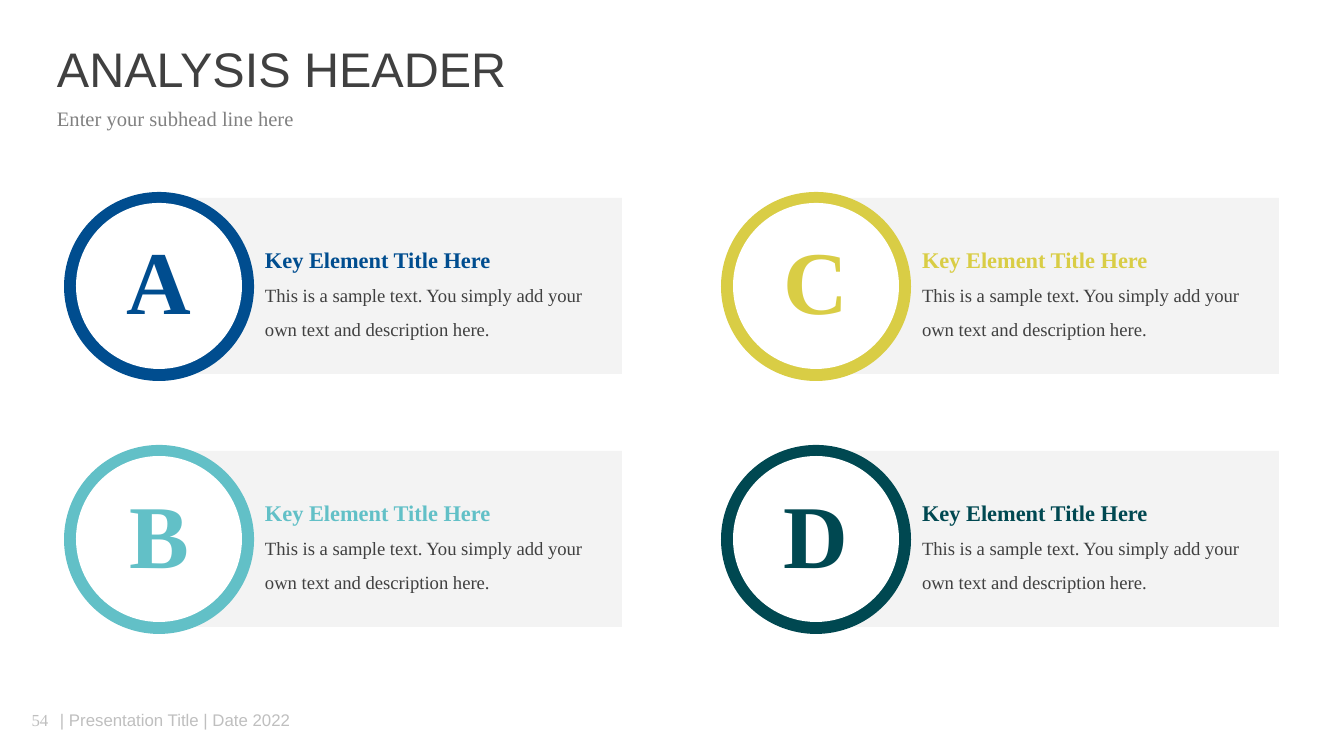
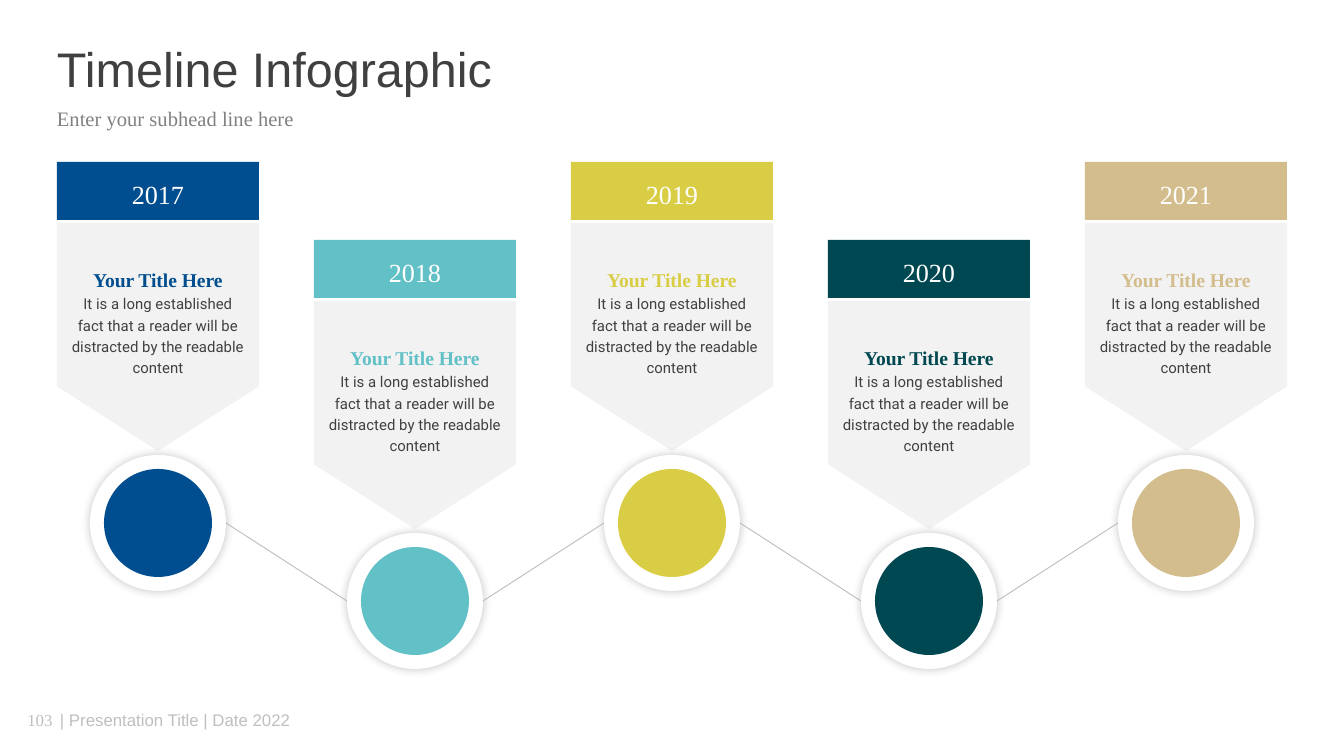
from copy import deepcopy
from dataclasses import dataclass

from lxml import etree
from pptx import Presentation
from pptx.dml.color import RGBColor
from pptx.enum.shapes import MSO_CONNECTOR, MSO_SHAPE
from pptx.enum.text import MSO_ANCHOR, MSO_AUTO_SIZE, PP_ALIGN
from pptx.oxml.ns import qn
from pptx.util import Emu, Pt

RECT = MSO_SHAPE.RECTANGLE
OVAL = MSO_SHAPE.OVAL
PENTAGON = MSO_SHAPE.PENTAGON
STRAIGHT = MSO_CONNECTOR.STRAIGHT
MIDDLE = MSO_ANCHOR.MIDDLE
GROW = MSO_AUTO_SIZE.SHAPE_TO_FIT_TEXT
LEFT, CENTER = PP_ALIGN.LEFT, PP_ALIGN.CENTER

EMU_PER_PX = 914400 / 134.4


@dataclass(frozen=True)
class Style:
    size: float
    font: str
    color: str
    bold: bool = False


@dataclass(frozen=True)
class Theme:
    blue: str = "004D8F"
    aqua: str = "62C0C7"
    lime: str = "D9CD45"
    teal: str = "004851"
    sand: str = "D4BD8D"
    white: str = "FFFFFF"
    panel: str = "F2F2F2"
    line: str = "BFBFBF"
    serif: str = "Times New Roman"
    title: Style = Style(26, "Arial", "404040")
    subhead: Style = Style(11, "Times New Roman", "808080")
    number: Style = Style(9, "Times New Roman", "BFBFBF")
    footer: Style = Style(9, "Arial", "BFBFBF")
    year: Style = Style(14, "Times New Roman", "FFFFFF")
    body: Style = Style(10, "Times New Roman", "404040")
    small: Style = Style(8, "Roboto", "404040")

    def heading(self, size, color):
        return Style(size, self.serif, color, True)


T = Theme()


def px(n):
    return Emu(round(n * EMU_PER_PX))


def rgb(color):
    return RGBColor.from_string(color)


def write(shape, paragraphs, align=LEFT, spacing=None, after=None, insets=None):
    """Fill a shape with paragraphs, each a list of (line, style) pairs."""
    tf = shape.text_frame
    tf.word_wrap = True
    tf.vertical_anchor = MIDDLE
    if insets:
        tf.margin_left = tf.margin_right = px(insets[0])
        tf.margin_top = tf.margin_bottom = px(insets[1])
    tf.text = "\n".join("\v".join(line for line, _ in lines) for lines in paragraphs)
    for p, lines in zip(tf.paragraphs, paragraphs):
        p.alignment = align
        p.line_spacing = spacing
        p.space_after = after
        for r, (_, style) in zip(p.runs, lines):
            r.font.size = Pt(style.size)
            r.font.name = style.font
            r.font.bold = style.bold
            r.font.color.rgb = rgb(style.color)
        for br in p._p.findall(qn("a:br")):
            br.append(deepcopy(p.runs[0]._r.rPr))


def add_text(s, box, paragraphs, align=LEFT, spacing=None, after=None,
             insets=(0, 0), grow=False):
    tb = s.shapes.add_textbox(*map(px, box))
    write(tb, paragraphs, align, spacing, after, insets)
    if grow:
        tb.text_frame.auto_size = GROW


def add_filled(shapes, kind, box, color):
    sp = shapes.add_shape(kind, *map(px, box))
    sp.shadow.inherit = False
    sp.fill.solid()
    sp.fill.fore_color.rgb = rgb(color)
    sp.line.fill.background()
    return sp


def set_alpha(parent, percent):
    """Set the opacity of the colour found below parent."""
    color = next(parent.iter(qn("a:srgbClr")))
    etree.SubElement(color, qn("a:alpha"), val=str(percent * 1000))


def add_glow(sp):
    """Give a shape a soft shadow that is equal on all sides."""
    effects = sp._element.spPr.find(qn("a:effectLst"))
    shadow = etree.SubElement(effects, qn("a:outerShdw"), blurRad=str(Pt(5)),
                              dist="0", dir="0", algn="ctr", rotWithShape="0")
    etree.SubElement(shadow, qn("a:srgbClr"), val="000000")
    set_alpha(shadow, 21)


def add_link(s, start, end):
    cx = s.shapes.add_connector(STRAIGHT, *map(px, (*start, *end)))
    cx.line.color.rgb = rgb(T.line)
    cx.line.width = Pt(0.5)
    etree.SubElement(cx._element.spPr, qn("a:effectLst"))


def add_slide(prs, number, title):
    """Start a slide with the shared footer, subhead and title."""
    s = prs.slides.add_slide(prs.slide_layouts[6])
    add_text(s, (11, 700, 58, 40), [[(number, T.number)]], CENTER, insets=(13, 7))
    add_text(s, (60, 710, 269, 20), [[("| Presentation Title | Date 2022", T.footer)]],
             grow=True)
    add_text(s, (57, 107, 1230, 26), [[("Enter your subhead line here", T.subhead)]],
             spacing=0.9)
    add_text(s, (57, 42, 1230, 60), [[(title, T.title)]], spacing=0.9)
    return s


def add_element_card(s, x, y, letter, color):
    panel = add_filled(s.shapes, RECT, (x + 84, y + 6, 474, 176), T.panel)
    set_alpha(panel._element.spPr, 85)
    badge = s.shapes.add_group_shape().shapes
    add_filled(badge, OVAL, (x, y, 190, 189), color)
    face = add_filled(badge, OVAL, (x + 12, y + 11, 166, 166), T.white)
    write(face, [[(letter, T.heading(48, color))]], CENTER, 0.9, insets=(26, 17))
    add_text(s, (x + 201, y + 40, 321, 109), [[
        ("Key Element Title Here", T.heading(12, color)),
        ("This is a sample text. You simply add your own text and description here.",
         T.body),
    ]], spacing=1.5, after=Pt(10), grow=True)


def add_milestone(s, x, y, year, color):
    pointer = add_filled(s.shapes, PENTAGON, (x - 13, y + 74, 228, 202), T.panel)
    pointer.adjustments[0] = 0.32
    pointer.rotation = 90
    label = add_filled(s.shapes, RECT, (x, y, 202, 58), color)
    write(label, [[(year, T.year)]], CENTER, 1.2)
    add_text(s, (x + 12, y + 100, 178, 116), [
        [("Your Title Here", T.heading(10.5, color))],
        [("It is a long established fact that a reader will be distracted by "
          "the readable content", T.small)],
    ], CENTER, 1.2, grow=True)
    add_glow(add_filled(s.shapes, OVAL, (x + 33, y + 293, 136, 136), T.white))
    add_filled(s.shapes, OVAL, (x + 47, y + 307, 108, 108), color)


def analysis_slide(prs):
    s = add_slide(prs, "54", "ANALYSIS HEADER")
    for i, (letter, color) in enumerate(zip("ABCD", (T.blue, T.aqua, T.lime, T.teal))):
        column, row = divmod(i, 2)
        add_element_card(s, 64 + 657 * column, 192 + 253 * row, letter, color)


def timeline_slide(prs):
    s = add_slide(prs, "103", "Timeline Infographic")
    colors = (T.blue, T.aqua, T.lime, T.teal, T.sand)
    places = [(57 + 257 * i, 162 + 78 * (i % 2)) for i in range(len(colors))]
    for i, ((x, y), color) in enumerate(zip(places, colors)):
        add_milestone(s, x, y, str(2017 + i), color)
    for (x1, y1), (x2, y2) in zip(places, places[1:]):
        add_link(s, (x1 + 169, y1 + 361), (x2 + 33, y2 + 361))


def main():
    prs = Presentation()
    prs.slide_width, prs.slide_height = px(1344), px(756)
    analysis_slide(prs)
    timeline_slide(prs)
    prs.save("out.pptx")


if __name__ == "__main__":
    main()
